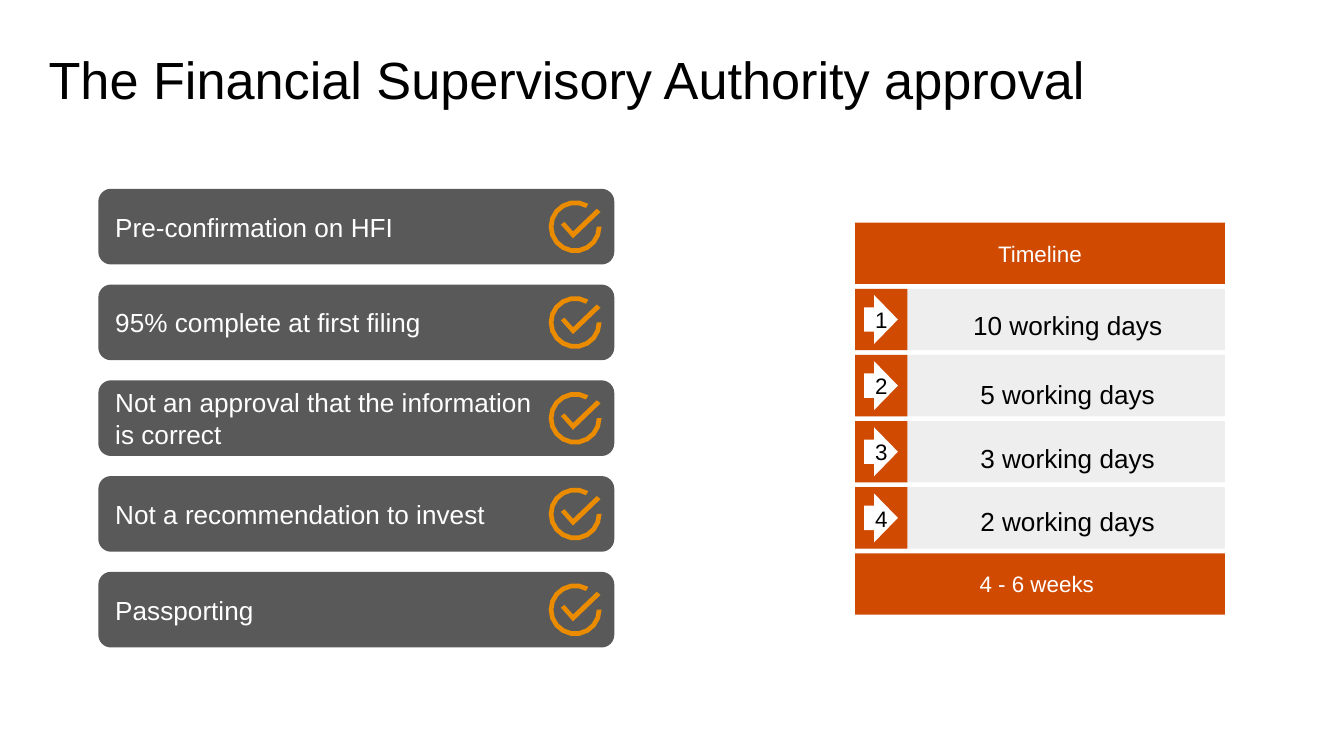
import math
from dataclasses import dataclass

from pptx import Presentation
from pptx import util as u
from pptx.dml.color import RGBColor
from pptx.enum import shapes, text

COLORS = {
    "black": "000000",
    "white": "FFFFFF",
    "charcoal": "595959",
    "orange": "D04A02",
    "amber": "EB8C00",
    "pale": "EEEEEE",
}
FONT = "Arial"
SHAPE = shapes.MSO_SHAPE
ALIGN = text.PP_ALIGN
ANCHOR = text.MSO_ANCHOR

CLAIM_LEFT, CLAIM_TOP, CLAIM_PITCH = 1.86, 3.57, 1.81
CLAIM_WIDTH, CLAIM_HEIGHT = 9.75, 1.43
CHECK_X, CHECK_RADIUS, CHECK_INNER_RADIUS = 10.87, 0.5, 0.41
TICK = [(-0.04, 0.22), (-0.27, -0.04), (-0.2, -0.09), (-0.04, 0.09), (0.41, -0.34), (0.48, -0.28)]

TIMELINE_LEFT, TIMELINE_TOP, TIMELINE_PITCH = 16.16, 4.21, 1.25
TIMELINE_WIDTH, ROW_HEIGHT, BADGE_WIDTH = 6.99, 1.16, 0.99
TIGHT_INSETS = (0.18, 0.1)
WIDE_INSETS = (0.25, 0.25)


@dataclass(frozen=True)
class Box:
    left: float
    top: float
    width: float
    height: float

    def lengths(self) -> list:
        return [u.Cm(value) for value in (self.left, self.top, self.width, self.height)]


@dataclass(frozen=True)
class TextStyle:
    size: int
    color: str
    align: ALIGN = ALIGN.CENTER
    anchor: ANCHOR = ANCHOR.TOP
    insets: tuple = TIGHT_INSETS


@dataclass(frozen=True)
class Step:
    duration: str
    text_offset: float


TITLE_STYLE = TextStyle(28, "black", ALIGN.LEFT, insets=(0, 0))
CLAIM_STYLE = TextStyle(14, "white", ALIGN.LEFT, ANCHOR.MIDDLE, WIDE_INSETS)
BAND_STYLE = TextStyle(12, "white", anchor=ANCHOR.MIDDLE)
NUMBER_STYLE = TextStyle(12, "black")
DURATION_STYLE = TextStyle(14, "black", insets=WIDE_INSETS)

CLAIMS = [
    "Pre-confirmation on HFI",
    "95% complete at first filing",
    "Not an approval that the information\nis correct",
    "Not a recommendation to invest",
    "Passporting",
]
STEPS = [
    Step("10 working days", 0.13),
    Step("5 working days", 0.2),
    Step("3 working days", 0.16),
    Step("2 working days", 0.09),
]


def paint(shape, color: str) -> None:
    shape.shadow.inherit = False
    shape.fill.solid()
    shape.fill.fore_color.rgb = RGBColor.from_string(COLORS[color])
    shape.line.fill.background()


def write(shape, words: str, style: TextStyle) -> None:
    frame = shape.text_frame
    frame.word_wrap = True
    frame.vertical_anchor = style.anchor
    horizontal, vertical = style.insets
    frame.margin_left = frame.margin_right = u.Cm(horizontal)
    frame.margin_top = frame.margin_bottom = u.Cm(vertical)
    frame.text = words
    for paragraph in frame.paragraphs:
        paragraph.alignment = style.align
        for run in paragraph.runs:
            run.font.name = FONT
            run.font.size = u.Pt(style.size)
            run.font.color.rgb = RGBColor.from_string(COLORS[style.color])


def add_block(slide, kind: SHAPE, box: Box, color: str):
    shape = slide.shapes.add_shape(kind, *box.lengths())
    paint(shape, color)
    return shape


def add_label(slide, box: Box, words: str, style: TextStyle) -> None:
    write(slide.shapes.add_textbox(*box.lengths()), words, style)


def arc(radius: float, angles: range) -> list:
    return [
        (radius * math.cos(math.radians(angle)), radius * math.sin(math.radians(angle)))
        for angle in angles
    ]


def add_check(slide, center_x: float, center_y: float) -> None:
    ring = arc(CHECK_RADIUS, range(0, 301, 20)) + arc(CHECK_INNER_RADIUS, range(300, -1, -20))
    tick, ring = [
        [(u.Cm(center_x + x), u.Cm(center_y + y)) for x, y in outline]
        for outline in (TICK, ring)
    ]
    builder = slide.shapes.build_freeform(*tick[0])
    builder.add_line_segments(tick[1:], close=True)
    builder.move_to(*ring[0])
    builder.add_line_segments(ring[1:], close=True)
    paint(builder.convert_to_shape(), "amber")


def add_claim(slide, index: int, words: str) -> None:
    top = CLAIM_TOP + index * CLAIM_PITCH
    box = Box(CLAIM_LEFT, top, CLAIM_WIDTH, CLAIM_HEIGHT)
    shape = add_block(slide, SHAPE.ROUNDED_RECTANGLE, box, "charcoal")
    shape.adjustments[0] = 0.167
    write(shape, words, CLAIM_STYLE)
    add_check(slide, CHECK_X, top + CLAIM_HEIGHT / 2)


def timeline_row(index: int) -> Box:
    return Box(TIMELINE_LEFT, TIMELINE_TOP + index * TIMELINE_PITCH, TIMELINE_WIDTH, ROW_HEIGHT)


def add_band(slide, index: int, words: str) -> None:
    write(add_block(slide, SHAPE.RECTANGLE, timeline_row(index), "orange"), words, BAND_STYLE)


def add_step(slide, number: int, step: Step) -> None:
    row = timeline_row(number)
    add_block(slide, SHAPE.RECTANGLE, row, "pale")
    badge = Box(row.left, row.top, BADGE_WIDTH, ROW_HEIGHT)
    add_block(slide, SHAPE.RECTANGLE, badge, "orange")
    arrow_box = Box(row.left + 0.17, row.top + 0.12, 0.64, 0.92)
    arrow = add_block(slide, SHAPE.RIGHT_ARROW, arrow_box, "white")
    arrow.adjustments[0] = 0.5
    arrow.adjustments[1] = 0.7
    add_label(slide, Box(row.left, row.top + 0.23, BADGE_WIDTH, 0.55), str(number), NUMBER_STYLE)
    duration_box = Box(row.left + 1.05, row.top + step.text_offset, 5.94, 1.12)
    add_label(slide, duration_box, step.duration, DURATION_STYLE)


def main() -> None:
    presentation = Presentation()
    presentation.slide_width = u.Cm(25.4)
    presentation.slide_height = u.Cm(14.29)
    slide = presentation.slides.add_slide(presentation.slide_layouts[6])
    title_box = Box(0.92, 0.89, 23.55, 2.9)
    add_label(slide, title_box, "The Financial Supervisory Authority approval", TITLE_STYLE)
    add_band(slide, 0, "Timeline")
    for number, step in enumerate(STEPS, start=1):
        add_step(slide, number, step)
    add_band(slide, len(STEPS) + 1, "4 - 6 weeks ")
    for index, words in enumerate(CLAIMS):
        add_claim(slide, index, words)
    presentation.save("out.pptx")


if __name__ == "__main__":
    main()
